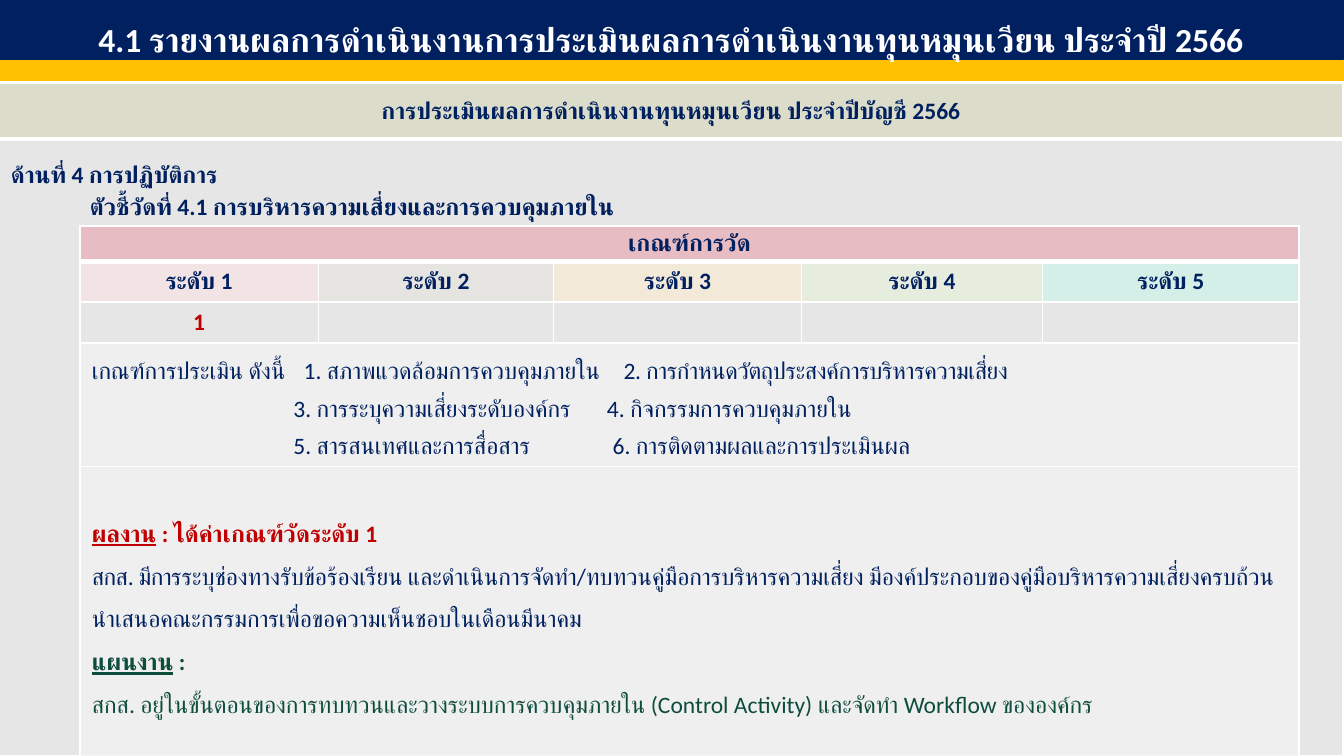
from collections import namedtuple
from dataclasses import dataclass

import pptx
import pptx.dml.color
import pptx.enum.shapes
import pptx.enum.text
import pptx.oxml.ns
import pptx.util
from lxml import etree

Pt = pptx.util.Pt
qn = pptx.oxml.ns.qn
ALIGN = pptx.enum.text.PP_ALIGN
ANCHOR = pptx.enum.text.MSO_ANCHOR
Box = namedtuple("Box", "left top width height")


@dataclass(frozen=True)
class Theme:
    font: str = "Calibri"
    title_size: float = 20
    body_size: float = 14
    navy: str = "002060"
    gold: str = "FFC000"
    white: str = "FFFFFF"
    red: str = "C00000"
    green: str = "0E4D3C"
    olive: str = "DBDCC9"
    gray: str = "E7E6E6"
    pale: str = "F2F2F2"
    rose: str = "E8ABB5"
    levels: tuple = ("FAE4E5", "E6E4DF", "FCEBD1", "E8F3DA", "C8F5E8")


THEME = Theme()
BOLD = {"bold": True}
RESULT = {"color": THEME.red, "bold": True}
PLAN = {"color": THEME.green, "bold": True}
CENTERED = {"alignment": ALIGN.CENTER}

TITLE = "4.1 รายงานผลการดำเนินงานการประเมินผลการดำเนินงานทุนหมุนเวียน ประจำปี 2566"
SUBTITLE = "การประเมินผลการดำเนินงานทุนหมุนเวียน ประจำปีบัญชี 2566"
HEADINGS = [
    ({"line_spacing": 1.5, "space_after": Pt(0.3)}, [("ด้านที่ 4 การปฏิบัติการ", BOLD)]),
    ({"line_spacing": 1.1, "space_after": Pt(0.5), "indent": 47},
     [("ตัวชี้วัดที่ 4.1 การบริหารความเสี่ยงและการควบคุมภายใน", BOLD)]),
]
CRITERIA = [
    ({"line_spacing": 1.3, "tabs": (126, 316.5)},
     [("เกณฑ์การประเมิน ดังนี้\t1. สภาพแวดล้อมการควบคุมภายใน\t", {}),
      ("2. การกำหนดวัตถุประสงค์การบริหารความเสี่ยง", {"tracking": -0.2})]),
    ({"line_spacing": 1.3, "tabs": (120, 306.5)},
     [("\t3. การระบุความเสี่ยงระดับองค์กร\t4. กิจกรรมการควบคุมภายใน", {})]),
    ({"line_spacing": 1.3, "tabs": (120, 310)},
     [("\t5. สารสนเทศและการสื่อสาร\t6. การติดตามผลและการประเมินผล", {})]),
]
FINDINGS = [
    ({"line_spacing": 1.5},
     [("ผลงาน", {**RESULT, "underline": True}), (" : ได้ค่าเกณฑ์วัดระดับ 1", RESULT)]),
    ({"line_spacing": 1.5},
     [("สกส. มีการ", {"tracking": -0.3}),
      ("ระบุช่องทางรับข้อร้องเรียน และดำเนินการจัดทำ/ทบทวนคู่มือการบริหารความเสี่ยง "
       "มีองค์ประกอบของคู่มือบริหารความเสี่ยงครบถ้วน "
       "นำเสนอคณะกรรมการเพื่อขอความเห็นชอบในเดือนมีนาคม", {})]),
    ({"line_spacing": 1.5}, [("แผนงาน", {**PLAN, "underline": True}), (" :", PLAN)]),
    ({"line_spacing": 1.5},
     [("สกส. อยู่ในขั้นตอนของการทบทวนและวางระบบการควบคุมภายใน (Control Activity) "
       "และจัดทำ Workflow ขององค์กร", {"color": THEME.green})]),
]


def rgb(color):
    return pptx.dml.color.RGBColor.from_string(color)


def apply(target, formats):
    for name, value in formats.items():
        setattr(target, name, value)


def paint(target, color, opacity=100):
    target.fill.solid()
    target.fill.fore_color.rgb = rgb(color)
    if opacity < 100:
        for shade in target.fill._xPr.iterfind(qn("a:solidFill") + "/" + qn("a:srgbClr")):
            etree.SubElement(shade, qn("a:alpha"), val=str(opacity * 1000))


def outline(shape, color):
    shape.line.color.rgb = rgb(color)
    shape.line.width = Pt(1)


def add_span(para, text, size=THEME.body_size, color=THEME.navy, tracking=0, **formats):
    span = para.add_run()
    span.text = text
    apply(span.font, {"name": THEME.font, "size": Pt(size), "bold": False, **formats})
    span.font.color.rgb = rgb(color)
    properties = span._r.get_or_add_rPr()
    etree.SubElement(properties, qn("a:cs"), typeface=THEME.font)
    if tracking:
        properties.set("spc", str(round(tracking * 100)))


def write(frame, paragraphs):
    """Fill a text frame from (paragraph formats, spans) pairs."""
    for number, (formats, spans) in enumerate(paragraphs):
        para = frame.add_paragraph() if number else frame.paragraphs[0]
        formats = dict(formats)
        indent, tabs = formats.pop("indent", 0), formats.pop("tabs", ())
        apply(para, formats)
        properties = para._p.get_or_add_pPr()
        if indent:
            properties.set("marL", str(Pt(indent)))
        if tabs:
            stops = etree.SubElement(properties, qn("a:tabLst"))
            for stop in tabs:
                etree.SubElement(stops, qn("a:tab"), pos=str(Pt(stop)), algn="l")
        for text, style in spans:
            add_span(para, text, **style)


def set_borders(cell, top=1, bottom=1):
    properties = cell._tc.get_or_add_tcPr()
    for side, width in zip("LRTB", (1, 1, top, bottom)):
        line = etree.SubElement(properties, qn("a:ln" + side), w=str(Pt(width)))
        fill = etree.SubElement(line, qn("a:solidFill"))
        etree.SubElement(fill, qn("a:srgbClr"), val=THEME.white)


def add_grid(page, box, widths, heights):
    """Add an unstyled table with white lines, thicker under its first row."""
    table = page.shapes.add_table(len(heights), len(widths), *map(Pt, box)).table
    apply(table, {"first_row": False, "horz_banding": False})
    for column, width in zip(table.columns, widths):
        column.width = Pt(width)
    for number, (row, height) in enumerate(zip(table.rows, heights)):
        row.height = Pt(height)
        for cell in row.cells:
            set_borders(cell, top=3 if number == 1 else 1, bottom=1 if number else 3)
    return table


def fill_cell(cell, color, paragraphs=(), opacity=100, **formats):
    paint(cell, color, opacity)
    apply(cell, formats)
    write(cell.text_frame, paragraphs)
    if not paragraphs:
        etree.SubElement(cell.text_frame.paragraphs[0]._p, qn("a:endParaRPr"),
                         sz=str(THEME.body_size * 100))


def centered(text, **style):
    return [(CENTERED, [(text, {"bold": True, **style})])]


def build_header(page, box):
    """Place the navy title with the gold band at the foot of the box."""
    band = page.shapes.add_shape(pptx.enum.shapes.MSO_SHAPE.RECTANGLE, Pt(0),
                                 Pt(box.top + box.height - 11.5), Pt(box.width), Pt(11.5))
    band.shadow.inherit = False
    title = page.shapes.title
    apply(title, dict(left=Pt(box.left), top=Pt(box.top), width=Pt(box.width),
                      height=Pt(box.height - 12)))
    for shape, color in ((band, THEME.gold), (title, THEME.navy)):
        paint(shape, color)
        outline(shape, color)
    frame = title.text_frame
    apply(frame, {"word_wrap": True, "vertical_anchor": ANCHOR.MIDDLE,
                  "auto_size": pptx.enum.text.MSO_AUTO_SIZE.NONE})
    write(frame, [({**CENTERED, "line_spacing": 1.5, "space_before": Pt(0)},
                   [(TITLE, {"size": THEME.title_size, "color": THEME.white, "bold": True})])])
    band.element.addnext(title.element)


def build_backdrop(page, box):
    banner_height = 33
    table = add_grid(page, box, [box.width], [banner_height, box.height - banner_height])
    margins = {"margin_top": Pt(5), "margin_bottom": Pt(5)}
    fill_cell(table.cell(0, 0), THEME.olive, centered(SUBTITLE),
              vertical_anchor=ANCHOR.MIDDLE, **margins)
    fill_cell(table.cell(1, 0), THEME.gray, HEADINGS, **margins)


def build_scorecard(page, box):
    table = add_grid(page, box, [142, 140, 147.6, 143.4, 152.8], [21, 21, 21, 47.5, 174])
    last = len(THEME.levels) - 1
    for row in (0, 3, 4):
        table.cell(row, 0).merge(table.cell(row, last))
    fill_cell(table.cell(0, 0), THEME.rose, centered("เกณฑ์การวัด"), 70,
              margin_top=Pt(1.8), margin_bottom=Pt(1.8))
    for column, color in enumerate(THEME.levels):
        fill_cell(table.cell(1, column), color, centered(f"ระดับ {column + 1}"), 60)
        score = () if column else centered("1", color=THEME.red)
        fill_cell(table.cell(2, column), THEME.gray, score)
    fill_cell(table.cell(3, 0), THEME.pale, CRITERIA, 80)
    fill_cell(table.cell(4, 0), THEME.pale, FINDINGS, 80, vertical_anchor=ANCHOR.MIDDLE)


def main():
    deck = pptx.Presentation()
    apply(deck, {"slide_width": Pt(800), "slide_height": Pt(450)})
    page = deck.slides.add_slide(deck.slide_layouts.get_by_name("Title Only"))
    build_header(page, Box(-0.7, -1.4, 800, 48.9))
    build_backdrop(page, Box(-0.7, 49.7, 800, 400))
    build_scorecard(page, Box(47.5, 134.6, 725.8, 284.5))
    deck.save("out.pptx")


if __name__ == "__main__":
    main()
